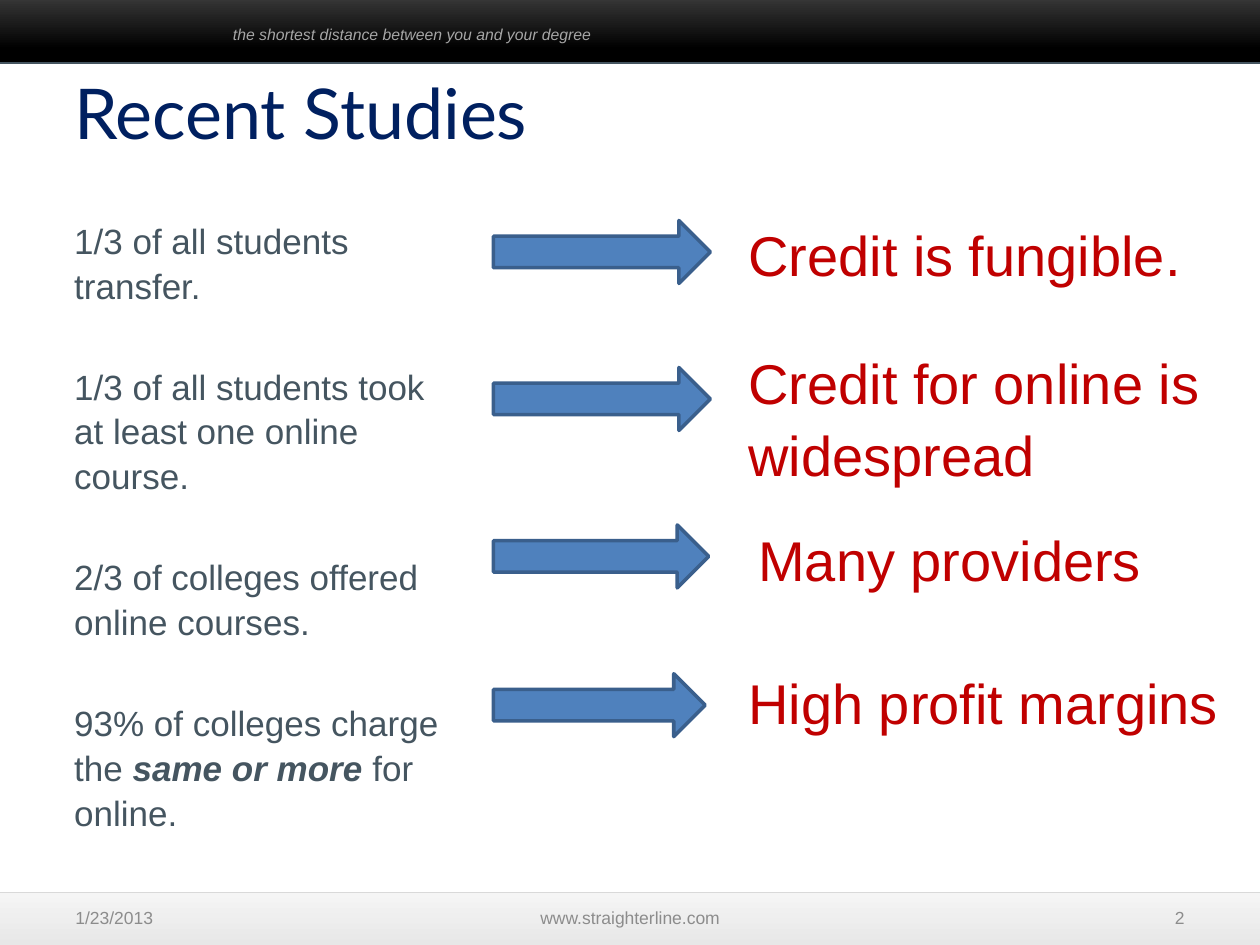
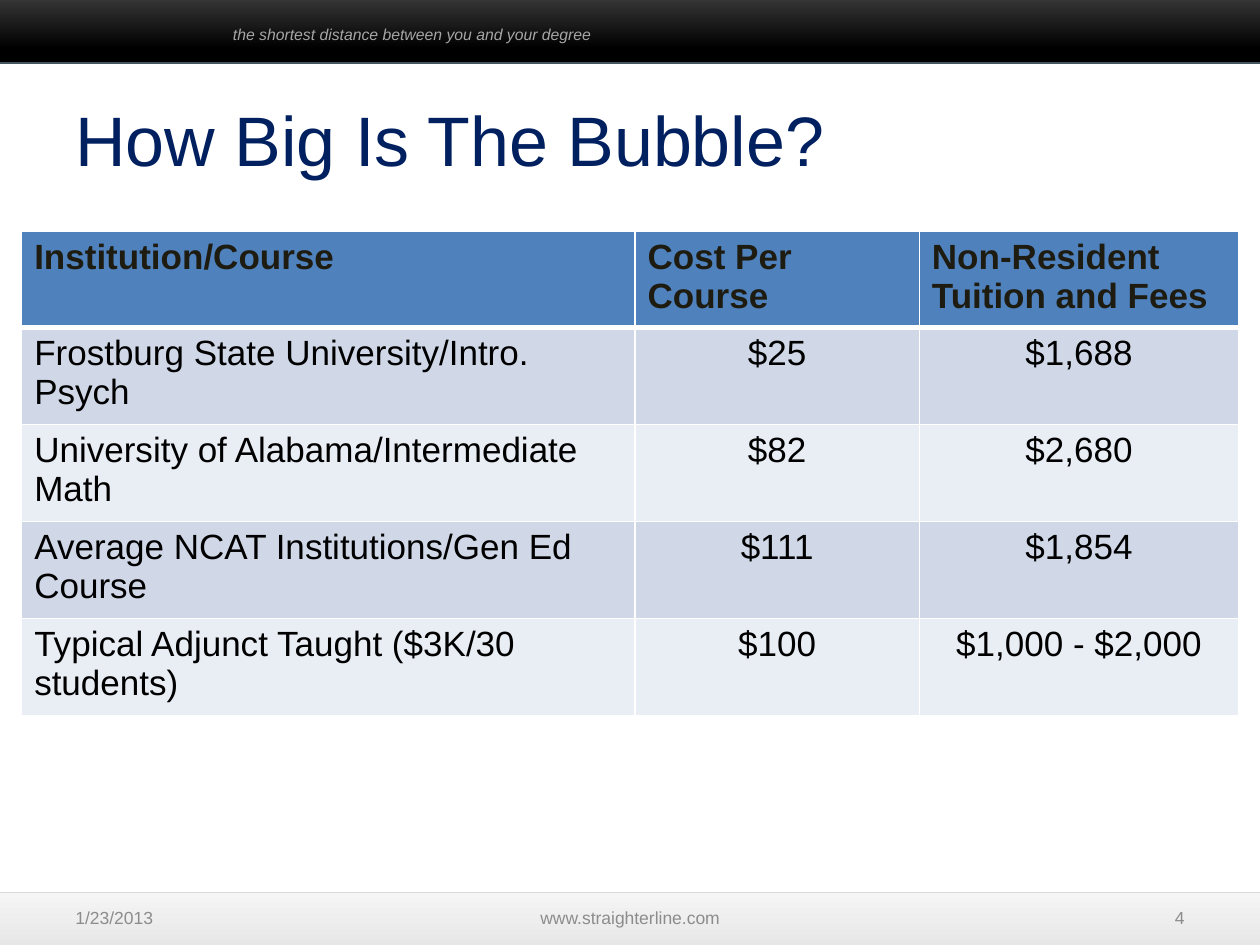
from lxml import etree
from pptx import Presentation
from pptx.dml.color import RGBColor
from pptx.enum.shapes import MSO_SHAPE as Preset
from pptx.enum.text import MSO_ANCHOR as Anchor, PP_ALIGN as Align
from pptx.oxml.ns import qn
from pptx.util import Pt

NAVY = RGBColor(0x00, 0x20, 0x60)
SLATE = RGBColor(0x45, 0x55, 0x60)
RED = RGBColor(0xC0, 0x00, 0x00)
BLUE = RGBColor(0x4F, 0x81, 0xBD)
DARK_BLUE = RGBColor(0x3A, 0x5F, 0x8C)
ROW_DARK = RGBColor(0xD0, 0xD8, 0xE8)
ROW_LIGHT = RGBColor(0xE9, 0xED, 0xF4)
HEADER_INK = RGBColor(0x1E, 0x1C, 0x11)
BLACK = RGBColor(0x00, 0x00, 0x00)
CHARCOAL = RGBColor(0x40, 0x40, 0x40)
WHITE = RGBColor(0xFF, 0xFF, 0xFF)
PALE_GREY = RGBColor(0xF2, 0xF2, 0xF2)
LIGHT_GREY = RGBColor(0xD9, 0xD9, 0xD9)
FOOTER_GREY = RGBColor(0x8C, 0x8C, 0x8C)
TAGLINE_GREY = RGBColor(0xA6, 0xA6, 0xA6)


class Deck:
    """Holds the shared style and the slide being built."""

    font = "Arial"
    spacing = 1.07

    def __init__(self):
        self.prs = Presentation()
        self.prs.slide_width, self.prs.slide_height = Pt(720), Pt(540)
        self.slide = None

    def new_slide(self, number):
        self.slide = self.prs.slides.add_slide(self.prs.slide_layouts[6])
        # Footer band
        self.band(510, 36, [(0, PALE_GREY), (1, LIGHT_GREY)], LIGHT_GREY, 1, 70)
        for left, width, wording, align in (
                (36, 168, "1/23/2013", Align.LEFT),
                (246, 228, "www.straighterline.com", Align.CENTER),
                (516, 168, str(number), Align.RIGHT)):
            self.text((left, 510, width, 28.8), [wording], 10, FOOTER_GREY,
                      align=align, anchor=Anchor.MIDDLE, spacing=1)
        # Header band
        self.band(-6, 42, [(0, CHARCOAL), (0.81, BLACK)], SLATE, 1.5)
        self.text((126, 10.8, 378, 18),
                  ["the shortest distance between you and your degree"],
                  9, TAGLINE_GREY, italic=True, spacing=1)

    def shape(self, preset, box, line, line_width):
        item = self.slide.shapes.add_shape(preset, *map(Pt, box))
        item.shadow.inherit = False
        item.line.color.rgb = line
        item.line.width = Pt(line_width)
        return item

    def band(self, top, height, stops, line, line_width, opacity=100):
        fill = self.shape(Preset.RECTANGLE, (-6, top, 732, height),
                          line, line_width).fill
        fill.gradient()
        fill.gradient_angle = 270
        for stop, (position, color) in zip(fill.gradient_stops, stops):
            stop.position = position
            stop.color.rgb = color
        if opacity < 100:
            gradient = self.slide.shapes[-1].fill._xPr.find(qn("a:gradFill"))
            for color in gradient.iter(qn("a:srgbClr")):
                etree.SubElement(color, qn("a:alpha"), val=str(opacity * 1000))

    def arrow(self, top, width):
        item = self.shape(Preset.RIGHT_ARROW, (282, top, width, 36), DARK_BLUE, 2)
        item.fill.solid()
        item.fill.fore_color.rgb = BLUE

    def text(self, box, paragraphs, size, color, font=None, align=Align.LEFT,
             anchor=Anchor.TOP, italic=False, gap=0, spacing=None):
        """Each paragraph is a string; parts between * are bold italic."""
        frame = self.slide.shapes.add_textbox(*map(Pt, box)).text_frame
        frame.word_wrap = True
        frame.vertical_anchor = anchor
        for index, wording in enumerate(paragraphs):
            paragraph = frame.add_paragraph() if index else frame.paragraphs[0]
            paragraph.alignment = align
            paragraph.line_spacing = spacing or self.spacing
            if index:
                paragraph.space_before = Pt(gap)
            for part, piece in enumerate(wording.split("*")):
                run = paragraph.add_run()
                run.text = piece
                strong = part % 2 == 1
                self.style(run, size, color, font, strong, italic or strong)

    def style(self, run, size, color, font=None, bold=False, italic=False):
        run.font.name = font or self.font
        run.font.size = Pt(size)
        run.font.color.rgb = color
        run.font.bold, run.font.italic = bold, italic

    def title(self, left, top, wording, font=None, spacing=None):
        self.text((left, top, 648, 90), [wording], 40, NAVY, font, spacing=spacing)

    def table(self, box, widths, heights, rows):
        grid = self.slide.shapes.add_table(len(rows), len(widths), *map(Pt, box)).table
        for column, width in zip(grid.columns, widths):
            column.width = Pt(width)
        for r, (row, height) in enumerate(zip(rows, heights)):
            grid.rows[r].height = Pt(height)
            for c, wording in enumerate(row):
                cell = grid.cell(r, c)
                cell.text_frame.text = wording
                paragraph = cell.text_frame.paragraphs[0]
                paragraph.alignment = Align.CENTER if r and c else Align.LEFT
                self.style(paragraph.runs[0], 20, BLACK if r else HEADER_INK,
                           bold=r == 0)
                self.borders(cell, top=3 if r == 1 else 1, bottom=1 if r else 3)
                cell.fill.solid()
                cell.fill.fore_color.rgb = (
                    BLUE if r == 0 else ROW_DARK if r % 2 else ROW_LIGHT)

    def borders(self, cell, top, bottom):
        properties = cell._tc.get_or_add_tcPr()
        for side, width in (("L", 1), ("R", 1), ("T", top), ("B", bottom)):
            line = etree.SubElement(properties, qn(f"a:ln{side}"), w=str(Pt(width)))
            fill = etree.SubElement(line, qn("a:solidFill"))
            etree.SubElement(fill, qn("a:srgbClr"), val=str(WHITE))


def recent_studies(deck):
    deck.new_slide(2)
    # Findings
    deck.text((35.3, 120, 228, 348), [
        "1/3 of all students transfer.",
        "1/3 of all students took at least one online course.",
        "2/3 of colleges offered online courses.",
        "93% of colleges charge the *same or more *for online.",
    ], 20, SLATE, gap=32)
    deck.title(35.3, 36, "Recent Studies", "Lato", 1)
    # Arrows and what each finding means
    for arrow_top, arrow_width, left, top, meaning in (
            (126, 124, 420.5, 120, "Credit is fungible."),
            (210, 124, 420.5, 193, "Credit for online is widespread"),
            (300, 123, 426.2, 294, "Many providers"),
            (385, 121, 420.5, 376, "High profit margins")):
        deck.arrow(arrow_top, arrow_width)
        deck.text((left, top, 720 - left, 36), [meaning], 32, RED)


def bubble(deck):
    deck.new_slide(4)
    deck.table((12.4, 132, 695.5, 276), (350.5, 162.5, 182.5), [54] + [55.4] * 4, [
        ("Institution/Course", "Cost Per Course", "Non-Resident Tuition and Fees"),
        ("Frostburg State University/Intro. Psych", "$25", "$1,688"),
        ("University of Alabama/Intermediate Math", "$82", "$2,680"),
        ("Average NCAT Institutions/Gen Ed Course", "$111", "$1,854"),
        ("Typical Adjunct Taught ($3K/30 students)", "$100", "$1,000 - $2,000"),
    ])
    deck.title(36, 48, "How Big Is The Bubble?")


def main():
    deck = Deck()
    recent_studies(deck)
    bubble(deck)
    deck.prs.save("out.pptx")


if __name__ == "__main__":
    main()
